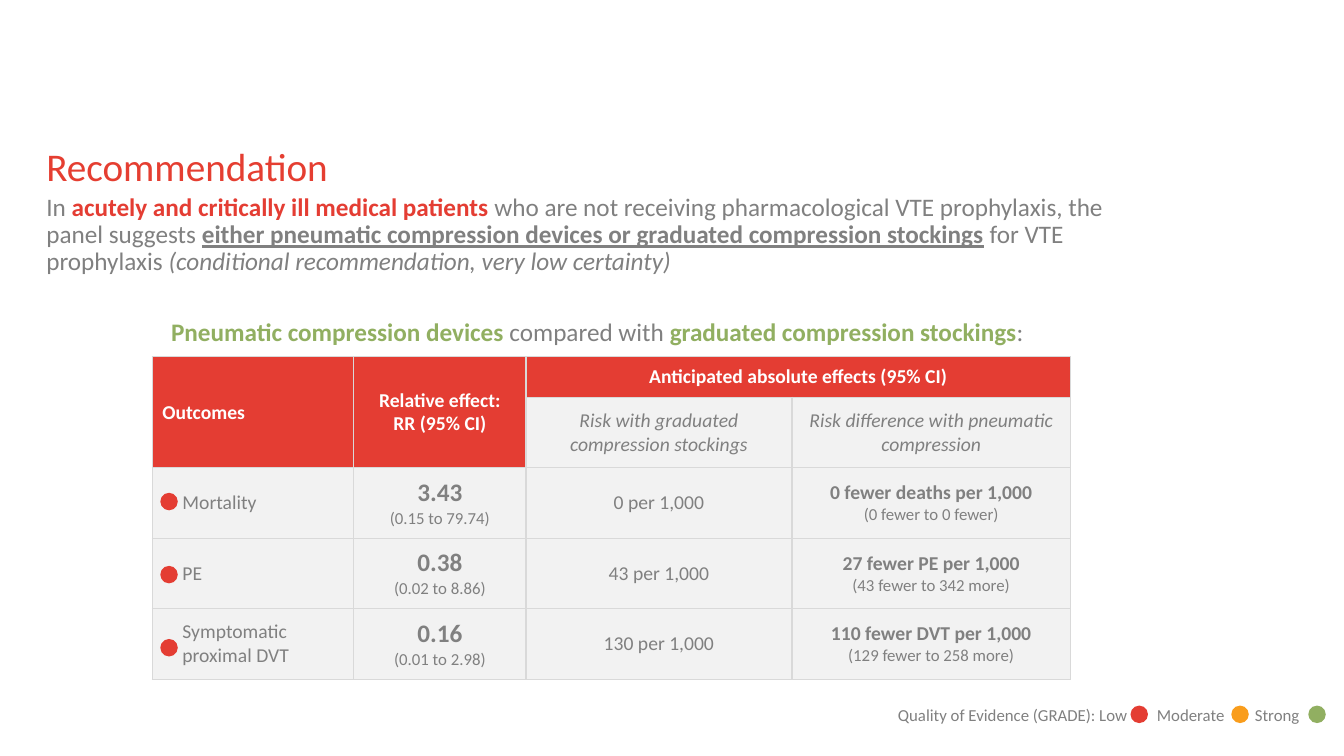
from lxml.etree import SubElement
from pptx import Presentation
from pptx.dml.color import RGBColor
from pptx.enum.shapes import MSO_SHAPE
from pptx.enum.text import MSO_ANCHOR, PP_ALIGN
from pptx.oxml.ns import qn
from pptx.util import Pt

RED, GREEN, GRAY, PALE, BORDER, WHITE = "E43D33", "91AF61", "808080", "F2F2F2", "D9D9D9", "FFFFFF"
BOLD, ITALIC = {"bold": True}, {"italic": True}
NO_INSETS = {"margin_left": 0, "margin_top": 0, "margin_right": 0, "margin_bottom": 0,
             "vertical_anchor": MSO_ANCHOR.TOP, "word_wrap": True}


def color(hex_value):
    return RGBColor.from_string(hex_value)


def add_run(paragraph, text, size, hex_value, formats):
    run = paragraph.add_run()
    run.text = text
    run.font.color.rgb = color(hex_value)
    for name, value in {"name": "Calibri", "size": Pt(size), "bold": False, **formats}.items():
        setattr(run.font, name, value)


presentation = Presentation()
presentation.slide_width, presentation.slide_height = Pt(960), Pt(540)
slide = presentation.slides.add_slide(presentation.slide_layouts[1])

# Title and body placeholders
title, body = slide.shapes.title, slide.placeholders[1]
for placeholder, top, width, height in [(title, 105.8, 864, 33.1), (body, 139, 787, 54.7)]:
    placeholder.left, placeholder.top = Pt(33.1), Pt(top)
    placeholder.width, placeholder.height = Pt(width), Pt(height)
    for name, value in NO_INSETS.items():
        setattr(placeholder.text_frame, name, value)

heading = title.text_frame.paragraphs[0]
heading.alignment, heading.line_spacing = PP_ALIGN.LEFT, 0.9
add_run(heading, "Recommendation", 28, "E53E31", {})

recommendation = [
    ("In ", GRAY, {}),
    ("acutely and critically ill medical patients ", RED, BOLD),
    ("who are not receiving pharmacological VTE prophylaxis, the panel suggests ", GRAY, {}),
    ("either pneumatic compression devices or graduated compression stockings", GRAY,
     {"bold": True, "underline": True}),
    (" for VTE prophylaxis ", GRAY, {}),
    ("(conditional recommendation, very low certainty)", GRAY, ITALIC),
]
comparison = [
    ("Pneumatic compression devices ", GREEN, BOLD),
    ("compared with ", GRAY, {}),
    ("graduated compression stockings", GREEN, BOLD),
    (":", GRAY, {}),
]
body_frame = body.text_frame
for paragraph, runs, alignment, space_before in [
    (body_frame.paragraphs[0], recommendation, PP_ALIGN.LEFT, 0),
    (body_frame.add_paragraph(), comparison, PP_ALIGN.CENTER, 31),
]:
    properties = paragraph._p.get_or_add_pPr()
    properties.set("marL", "0")
    properties.set("indent", "0")
    SubElement(properties, qn("a:buNone"))
    paragraph.alignment, paragraph.line_spacing = alignment, 0.9
    paragraph.space_before = Pt(space_before)
    for text, hex_value, formats in runs:
        add_run(paragraph, text, 18, hex_value, formats)

# Outcomes table: each cell lists its lines as (text, size, formats)
rows = [
    [[("Outcomes", 14, BOLD)],
     [("Relative effect:", 14, BOLD), ("RR (95% CI)", 14, BOLD)],
     [("Anticipated absolute effects (95% CI)", 14, BOLD)], []],
    [[], [],
     [("Risk with graduated compression stockings", 14, ITALIC)],
     [("Risk difference with pneumatic compression", 14, ITALIC)]],
]
for outcome, ratio, interval, risk, difference, span in [
    ("Mortality", "3.43", "(0.15 to 79.74)", "0 per 1,000",
     "0 fewer deaths per 1,000", "(0 fewer to 0 fewer)"),
    ("PE", "0.38", "(0.02 to 8.86)", "43 per 1,000",
     "27 fewer PE per 1,000", "(43 fewer to 342 more)"),
    ("Symptomatic proximal DVT", "0.16", "(0.01 to 2.98)", "130 per 1,000",
     "110 fewer DVT per 1,000", "(129 fewer to 258 more)"),
]:
    rows.append([[(outcome, 14, {})], [(ratio, 18, BOLD), (interval, 12, {})],
                 [(risk, 14, {})], [(difference, 14, BOLD), (span, 12, {})]])

table = slide.shapes.add_table(5, 4, Pt(108.7), Pt(254.9), Pt(656), Pt(230.4)).table
table.first_row = table.horz_banding = False
for column, width in zip(table.columns, [144, 123, 190, 199]):
    column.width = Pt(width)
for row, height in zip(table.rows, [28.8] + [50.4] * 4):
    row.height = Pt(height)

for row_index, row in enumerate(rows):
    for column_index, lines in enumerate(row):
        cell = table.cell(row_index, column_index)
        header = row_index == 0 or (row_index == 1 and column_index < 2)
        cell.vertical_anchor = MSO_ANCHOR.MIDDLE
        if column_index == 0 and not header:
            cell.margin_left = Pt(21.6)
        for side in ["a:lnL", "a:lnR", "a:lnT", "a:lnB"]:
            line = SubElement(cell._tc.get_or_add_tcPr(), qn(side), w=str(Pt(1)))
            SubElement(SubElement(line, qn("a:solidFill")), qn("a:srgbClr"), val=BORDER)
        cell.fill.solid()
        cell.fill.fore_color.rgb = color(RED if header else PALE)
        for line_index, (text, size, formats) in enumerate(lines):
            frame = cell.text_frame
            paragraph = frame.add_paragraph() if line_index else frame.paragraphs[0]
            paragraph.alignment = PP_ALIGN.CENTER if column_index else PP_ALIGN.LEFT
            add_run(paragraph, text, size, WHITE if header else GRAY, formats)

table.cell(0, 0).merge(table.cell(1, 0))
table.cell(0, 1).merge(table.cell(1, 1))
table.cell(0, 2).merge(table.cell(0, 3))

# Legend text, with tab stops leaving room for the dots
legend = slide.shapes.add_textbox(Pt(634.3), Pt(499.7), Pt(325.7), Pt(21.6))
legend.text_frame.word_wrap = True
paragraph = legend.text_frame.paragraphs[0]
tabs = SubElement(paragraph._p.get_or_add_pPr(), qn("a:tabLst"))
for position in [185, 255]:
    SubElement(tabs, qn("a:tab"), pos=str(Pt(position)), algn="l")
add_run(paragraph, "Quality of Evidence (GRADE): Low\tModerate\tStrong", 12, GRAY, {})

# Evidence dots: legend, then one per outcome
dots = [(807.5, 504, RED), (879.5, 504, "F99D1C"), (934.5, 504, GREEN)]
dots += [(114.5, 352 + 52.2 * index, RED) for index in range(3)]
for left, top, hex_value in dots:
    dot = slide.shapes.add_shape(MSO_SHAPE.OVAL, Pt(left), Pt(top), Pt(12.5), Pt(12.5))
    dot.shadow.inherit = False
    dot.fill.solid()
    dot.fill.fore_color.rgb = color(hex_value)
    dot.line.fill.background()

presentation.save("out.pptx")
